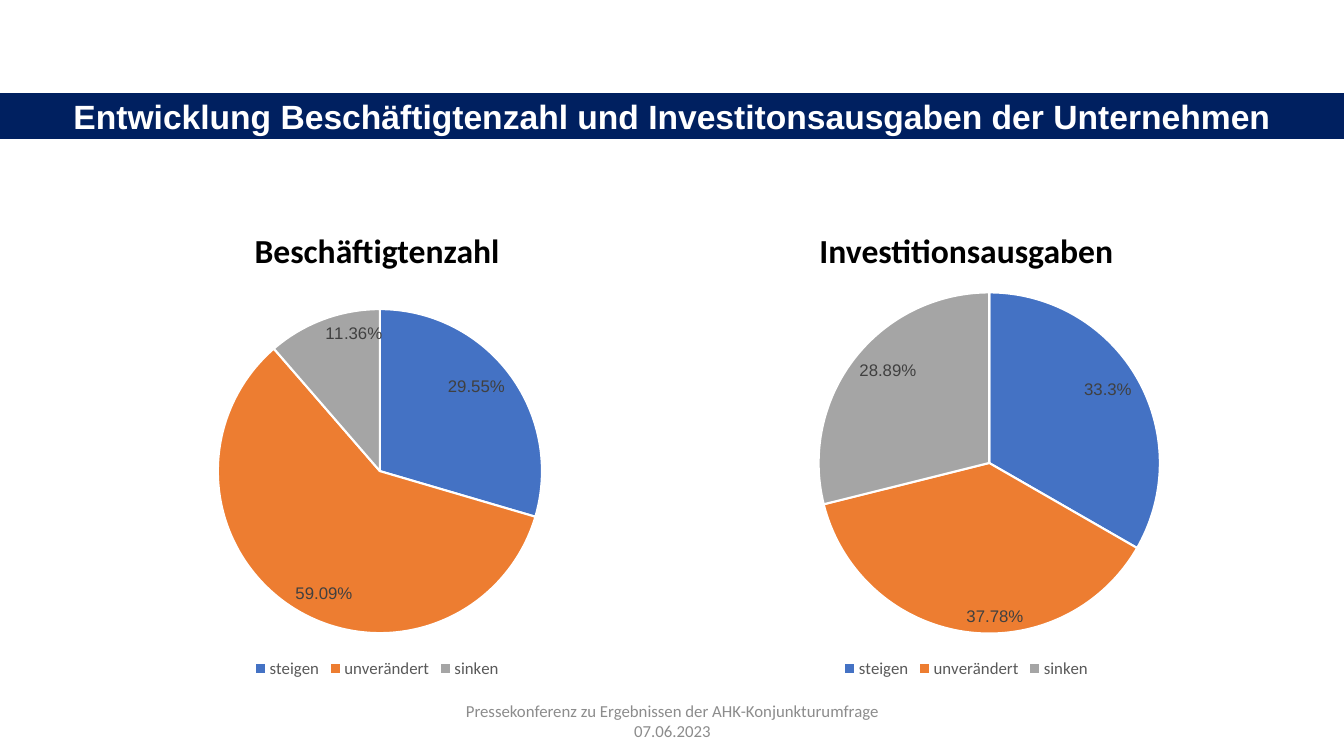
import pptx
import pptx.util
import pptx.chart.data
import pptx.dml.color
import pptx.enum.chart
import pptx.enum.shapes
import pptx.enum.text
import pptx.oxml
import pptx.oxml.ns

Inches = pptx.util.Inches
Pt = pptx.util.Pt
RGBColor = pptx.dml.color.RGBColor

NAVY = RGBColor(0x00, 0x20, 0x60)
WHITE = RGBColor(0xFF, 0xFF, 0xFF)
BLACK = RGBColor(0x00, 0x00, 0x00)
FOOTER_GREY = RGBColor(0x8C, 0x8C, 0x8C)
LEGEND_GREY = RGBColor(0x59, 0x59, 0x59)
LABEL_GREY = RGBColor(0x40, 0x40, 0x40)
SLICE_COLORS = (
    RGBColor(0x44, 0x72, 0xC4),
    RGBColor(0xED, 0x7D, 0x31),
    RGBColor(0xA5, 0xA5, 0xA5),
)

TITLE = "Entwicklung Beschäftigtenzahl und Investitonsausgaben der Unternehmen"
FOOTER = "Pressekonferenz zu Ergebnissen der AHK-Konjunkturumfrage 07.06.2023"
ANSWERS = ("steigen", "unverändert", "sinken")
# plot: x, y, width and height as shares of the chart frame
PANELS = (
    {"heading": "Beschäftigtenzahl", "left": 0.92, "width": 5.64,
     "values": (29.55, 59.09, 11.36), "plot": (0.22, 0.08, 0.57, 0.8)},
    {"heading": "Investitionsausgaben", "left": 6.75, "width": 5.67,
     "values": (33.3, 37.78, 28.89), "plot": (0.24, 0.04, 0.6, 0.84)},
)
HEADING_TOP, HEADING_HEIGHT, CHART_HEIGHT = 1.84, 0.9, 4.03

TITLE_FONT = {"name": "Arial", "size": Pt(24), "bold": True, "color": WHITE}
HEADING_FONT = {"name": "Calibri", "size": Pt(24), "bold": True, "color": BLACK}
FOOTER_FONT = {"name": "Calibri", "size": Pt(12), "color": FOOTER_GREY}
CHART_FONT = {"name": "Calibri", "size": Pt(10), "color": BLACK}
LEGEND_FONT = {"name": "Calibri", "size": Pt(12), "color": LEGEND_GREY}
LABEL_FONT = {"name": "Arial", "size": Pt(12), "bold": False, "color": LABEL_GREY}


def style_font(font, style):
    for key, value in style.items():
        if key == "color":
            font.color.rgb = value
        else:
            setattr(font, key, value)


def write_text(shape, text, style, anchor):
    frame = shape.text_frame
    frame.word_wrap = True
    frame.vertical_anchor = anchor
    para = frame.paragraphs[0]
    para.alignment = pptx.enum.text.PP_ALIGN.CENTER
    span = para.add_run()
    span.text = text
    style_font(span.font, style)
    return para


def add_text(page, bounds, text, style, anchor):
    box = page.shapes.add_textbox(*map(Inches, bounds))
    return write_text(box, text, style, anchor)


def place_plot(chart, plot):
    """Fix the inner plot area, which python-pptx has no method for."""
    settings = [("layoutTarget", "inner"), ("xMode", "edge"), ("yMode", "edge")]
    settings += zip("xywh", plot)
    parts = "".join(f'<c:{tag} val="{value}"/>' for tag, value in settings)
    layout = pptx.oxml.parse_xml(
        f'<c:layout {pptx.oxml.ns.nsdecls("c")}>'
        f"<c:manualLayout>{parts}</c:manualLayout></c:layout>")
    area = chart.plots[0]._element.getparent()
    for old in area.findall(pptx.oxml.ns.qn("c:layout")):
        area.remove(old)
    area.insert(0, layout)


def add_pie(page, panel, top):
    data = pptx.chart.data.CategoryChartData()
    data.categories = ANSWERS
    data.add_series("Series 1", panel["values"])
    bounds = (panel["left"], top, panel["width"], CHART_HEIGHT)
    chart = page.shapes.add_chart(
        pptx.enum.chart.XL_CHART_TYPE.PIE, *map(Inches, bounds), data).chart
    chart.has_title = False
    style_font(chart.font, CHART_FONT)

    chart.has_legend = True
    chart.legend.position = pptx.enum.chart.XL_LEGEND_POSITION.BOTTOM
    chart.legend.include_in_layout = False
    style_font(chart.legend.font, LEGEND_FONT)

    pie = chart.plots[0]
    pie.vary_by_categories = True
    for index, color in enumerate(SLICE_COLORS):
        slice_format = pie.series[0].points[index].format
        slice_format.fill.solid()
        slice_format.fill.fore_color.rgb = color
        slice_format.line.color.rgb = WHITE
        slice_format.line.width = Pt(1.5)

    labels = pie.series[0].data_labels
    labels.show_value = True
    labels.show_percentage = False
    labels.number_format = '0.0#"%"'
    labels.number_format_is_linked = False
    labels.position = pptx.enum.chart.XL_LABEL_POSITION.INSIDE_END
    style_font(labels.font, LABEL_FONT)
    place_plot(chart, panel["plot"])


def main():
    anchors = pptx.enum.text.MSO_ANCHOR
    deck = pptx.Presentation()
    deck.slide_width, deck.slide_height = Inches(13.33), Inches(7.5)
    page = deck.slides.add_slide(deck.slide_layouts[6])

    for panel in PANELS:
        bounds = (panel["left"], HEADING_TOP, panel["width"], HEADING_HEIGHT)
        para = add_text(page, bounds, panel["heading"], HEADING_FONT, anchors.BOTTOM)
        para.line_spacing = 0.9
        add_pie(page, panel, HEADING_TOP + HEADING_HEIGHT)

    banner = page.shapes.add_shape(
        pptx.enum.shapes.MSO_SHAPE.RECTANGLE,
        0, Inches(0.93), deck.slide_width, Inches(0.44))
    banner.shadow.inherit = False
    banner.fill.solid()
    banner.fill.fore_color.rgb = NAVY
    banner.line.color.rgb = NAVY
    banner.line.width = Pt(1)
    write_text(banner, TITLE, TITLE_FONT, anchors.MIDDLE)

    add_text(page, (4.42, 6.95, 4.5, 0.4), FOOTER, FOOTER_FONT, anchors.MIDDLE)
    deck.save("out.pptx")


if __name__ == "__main__":
    main()
